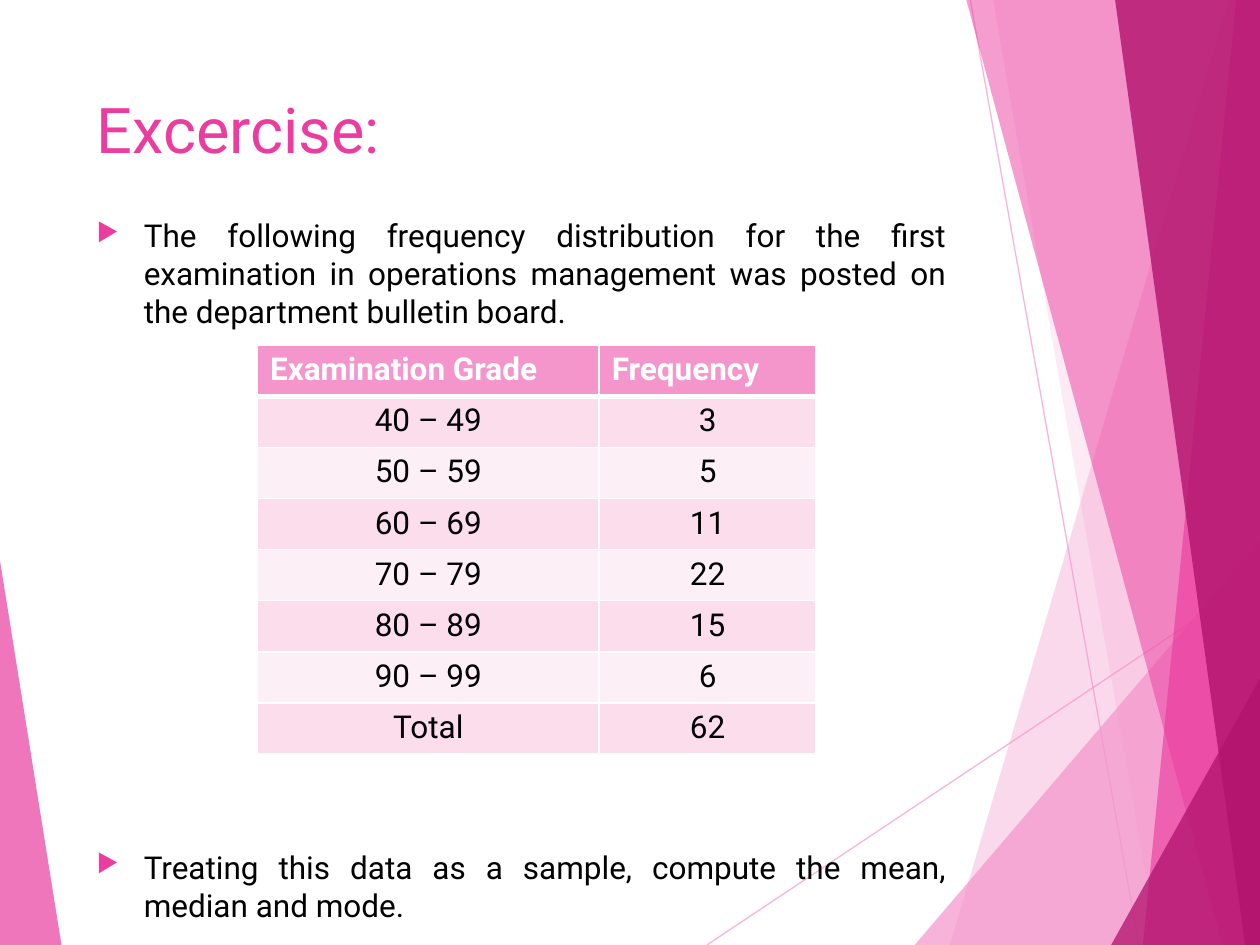
"""Build the frequency distribution exercise slide."""
import lxml.etree
import pptx
import pptx.dml.color
import pptx.enum.shapes
import pptx.enum.text
import pptx.oxml.ns
import pptx.util

Cm, Pt = pptx.util.Cm, pptx.util.Pt
Align = pptx.enum.text.PP_ALIGN
qn = pptx.oxml.ns.qn

WIDTH, HEIGHT = 25.4, 19.05
FONT = "Roboto"
COLOURS = {
    "light": "F496CB", "accent": "EB3D9F", "deep": "B2136D",
    "band": "FBDDEC", "pale": "FDEFF6", "text": "000000", "white": "FFFFFF",
}

TITLE = "Excercise:"
QUESTIONS = [
    ("The following frequency distribution for the first examination in operations "
     "management was posted on the department bulletin board.", 0),
    ("Treating this data as a sample, compute the mean, median and mode.", 296),
]
GRADES = [
    ("Examination Grade", "Frequency"),
    ("40 – 49", "3"),
    ("50 – 59", "5"),
    ("60 – 69", "11"),
    ("70 – 79", "22"),
    ("80 – 89", "15"),
    ("90 – 99", "6"),
    ("Total", "62"),
]
COLUMN_WIDTHS = [6.89, 4.37]
ROW_HEIGHT = 1.03

RAYS = [((14.25, HEIGHT), (WIDTH, 11.62)), ((19.56, 0), (22.96, HEIGHT))]
SHARDS = [
    ((24.77, 0), (19.15, HEIGHT), WIDTH, "light", 36),
    ((20.02, 0), (23.34, HEIGHT), WIDTH, "light", 20),
    ((WIDTH, 10.9), (18.44, HEIGHT), WIDTH, "light", 72),
    ((19.48, 0), (24.64, HEIGHT), WIDTH, "accent", 50),
    ((24.92, 0), (23.04, HEIGHT), WIDTH, "accent", 66),
    ((22.48, 0), (25.1, HEIGHT), WIDTH, "deep", 80),
    ((WIDTH, 13.68), (22.4, HEIGHT), WIDTH, "deep", 76),
    ((0, 11.3), (1.24, HEIGHT), 0, "accent", 70),
]


def rgb(name):
    return pptx.dml.color.RGBColor.from_string(COLOURS[name])


def add_child(parent, tag, **attributes):
    return lxml.etree.SubElement(parent, qn(tag), attributes)


def paint(fill, colour, opacity=100):
    fill.solid()
    fill.fore_color.rgb = rgb(colour)
    if opacity < 100:
        tint = fill._xPr.find(qn("a:solidFill"))[0]
        add_child(tint, "a:alpha", val=str(opacity * 1000))


def add_ray(slide, start, end):
    ray = slide.shapes.add_connector(
        pptx.enum.shapes.MSO_CONNECTOR.STRAIGHT, *map(Cm, start + end))
    ray.line.width = Pt(0.75)
    paint(ray.line.fill, "light", 70)
    add_child(ray._element.spPr, "a:effectLst")


def add_shard(slide, start, end, side, colour, opacity):
    outline = slide.shapes.build_freeform(*map(Cm, start))
    corners = [end, (side, end[1]), (side, start[1])]
    outline.add_line_segments([(Cm(x), Cm(y)) for x, y in corners])
    shard = outline.convert_to_shape()
    shard.shadow.inherit = False
    shard.line.fill.background()
    paint(shard.fill, colour, opacity)


def add_frame(slide, top, height):
    frame = slide.shapes.add_textbox(Cm(1.7), Cm(top), Cm(17.63), Cm(height)).text_frame
    frame.word_wrap = True
    return frame


def write(paragraph, words, size, colour, bold=False):
    run = paragraph.add_run()
    run.text = words
    run.font.name = FONT
    run.font.size = Pt(size)
    run.font.bold = bold
    run.font.color.rgb = rgb(colour)


def add_bullet(paragraph):
    properties = paragraph._p.get_or_add_pPr()
    properties.set("marL", str(Cm(0.95)))
    properties.set("indent", str(Cm(-0.95)))
    add_child(add_child(properties, "a:buClr"), "a:srgbClr", val=COLOURS["accent"])
    add_child(properties, "a:buSzPct", val="80000")
    add_child(properties, "a:buChar", char="▶")


def add_borders(cell, row):
    weights = {"L": 1, "R": 1, "T": 3 if row == 1 else 1, "B": 3 if row == 0 else 1}
    properties = cell._tc.get_or_add_tcPr()
    for side, weight in weights.items():
        border = add_child(properties, f"a:ln{side}", w=str(Pt(weight)))
        add_child(add_child(border, "a:solidFill"), "a:srgbClr", val=COLOURS["white"])


def add_grades(slide):
    grades = slide.shapes.add_table(
        len(GRADES), len(COLUMN_WIDTHS), Cm(5.19), Cm(6.96),
        Cm(sum(COLUMN_WIDTHS)), Cm(ROW_HEIGHT * len(GRADES))).table
    for column, width in zip(grades.columns, COLUMN_WIDTHS):
        column.width = Cm(width)
    for row, entries in enumerate(GRADES):
        grades.rows[row].height = Cm(ROW_HEIGHT)
        header = row == 0
        fill = "light" if header else "band" if row % 2 else "pale"
        for column, entry in enumerate(entries):
            cell = grades.cell(row, column)
            add_borders(cell, row)
            paint(cell.fill, fill)
            paragraph = cell.text_frame.paragraphs[0]
            paragraph.alignment = Align.LEFT if header else Align.CENTER
            write(paragraph, entry, 18, "white" if header else "text", header)


def main():
    deck = pptx.Presentation()
    deck.slide_width, deck.slide_height = Cm(WIDTH), Cm(HEIGHT)
    slide = deck.slides.add_slide(deck.slide_layouts[6])
    for ray in RAYS:
        add_ray(slide, *ray)
    for shard in SHARDS:
        add_shard(slide, *shard)

    write(add_frame(slide, 1.7, 3.66).paragraphs[0], TITLE, 36, "accent")

    body = add_frame(slide, 4.24, 13.92)
    for number, (question, gap) in enumerate(QUESTIONS):
        paragraph = body.add_paragraph() if number else body.paragraphs[0]
        paragraph.alignment = Align.JUSTIFY
        paragraph.space_before = Pt(gap)
        add_bullet(paragraph)
        write(paragraph, question, 18, "text")

    add_grades(slide)
    deck.save("out.pptx")


if __name__ == "__main__":
    main()
